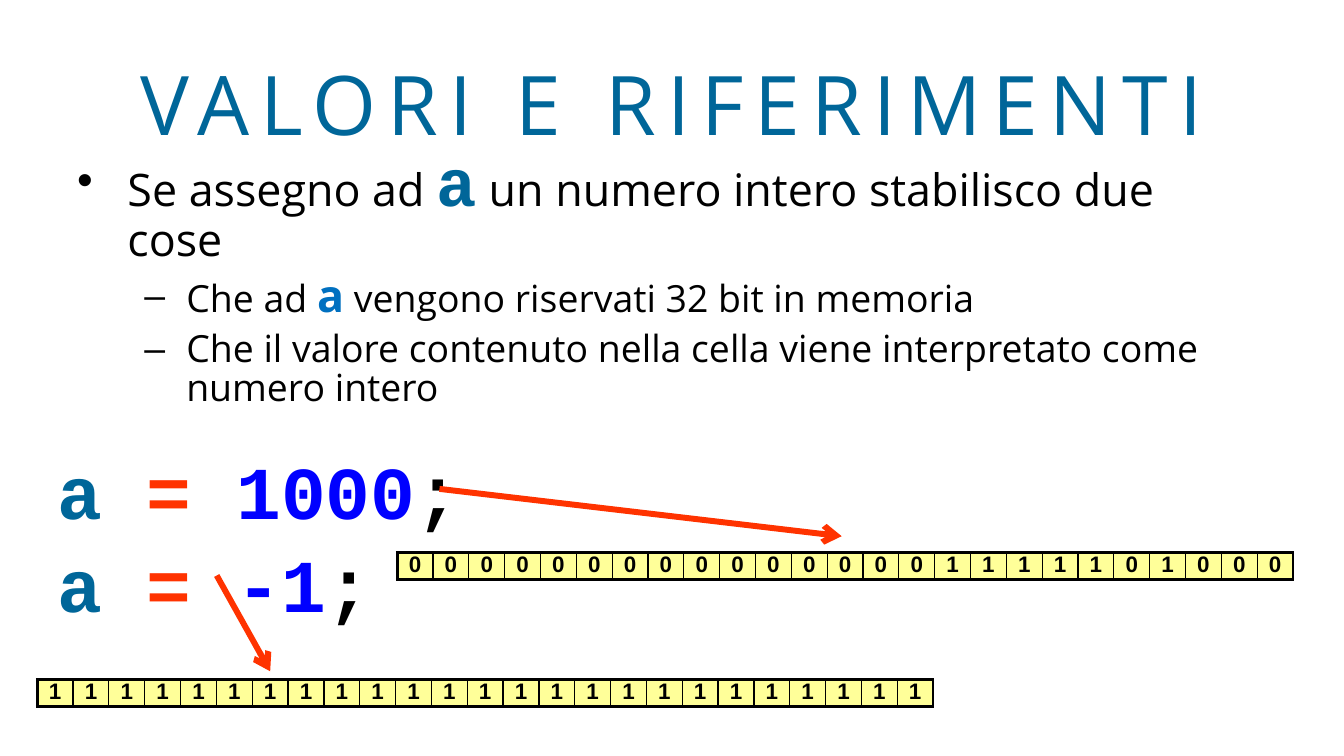
from dataclasses import dataclass

from lxml import etree
from pptx import Presentation
from pptx.dml.color import RGBColor
from pptx.enum import shapes, text
from pptx.oxml.ns import qn
from pptx.util import Pt


@dataclass(frozen=True)
class Theme:
    teal: str = "006699"
    blue: str = "0070C0"
    number: str = "0000FF"
    red: str = "FF3300"
    black: str = "000000"
    cell: str = "FFFF99"
    body: str = "Open Sans"
    code: str = "Courier New"
    bits: str = "Arial"
    title_size: float = 58.7
    code_size: float = 53.3
    variable_size: float = 48
    point_size: float = 32
    detail_size: float = 26.7
    bit_size: float = 16


theme = Theme()


def set_font(font, name, size, color, bold=False):
    font.name, font.size, font.bold = name, Pt(size), bold
    font.color.rgb = RGBColor.from_string(color)


def add_border(cell_properties, side, width, position):
    """Insert a solid black edge before the fill of a table cell."""
    edge = etree.Element(qn(f"a:ln{side}"), w=str(Pt(width)))
    fill = etree.SubElement(edge, qn("a:solidFill"))
    etree.SubElement(fill, qn("a:srgbClr"), val=theme.black)
    cell_properties.insert(position, edge)


deck = Presentation()
deck.slide_width, deck.slide_height = Pt(960), Pt(540)
slide = deck.slides.add_slide(deck.slide_layouts[5])

# Title
title = slide.shapes.title
title.left, title.top, title.width, title.height = Pt(48), Pt(28), Pt(864), Pt(90)
title.text_frame.auto_size = text.MSO_AUTO_SIZE.NONE
title.text_frame.vertical_anchor = text.MSO_ANCHOR.MIDDLE
heading = title.text_frame.paragraphs[0]
heading.alignment = text.PP_ALIGN.CENTER
heading_run = heading.add_run()
heading_run.text = "VALORI E RIFERIMENTI"
set_font(heading.font, theme.body, theme.title_size, theme.teal)
set_font(heading_run.font, theme.body, theme.title_size, theme.teal)
heading_run.font._element.set("spc", "800")

# Explanation: level, bullet, left margin, hanging indent, space before, runs
point = (theme.body, theme.point_size, theme.black)
detail = (theme.body, theme.detail_size, theme.black)
explanation = [
    (0, "•", 36, 36, 8, [
        ("Se assegno ad ", point),
        ("a", (theme.code, theme.variable_size, theme.teal, True)),
        (" un numero intero stabilisco due cose", point)]),
    (1, "–", 78, 30, 7, [
        ("Che ad ", detail),
        ("a", (theme.body, theme.point_size, theme.blue, True)),
        (" vengono riservati 32 bit in memoria", detail)]),
    (1, "–", 78, 30, 7, [
        ("Che il valore contenuto nella cella viene interpretato come numero intero",
         detail)]),
]
body = slide.shapes.add_textbox(Pt(48), Pt(104), Pt(825), Pt(136)).text_frame
body.word_wrap = True
for index, (level, bullet, margin, hanging, before, runs) in enumerate(explanation):
    paragraph = body.add_paragraph() if index else body.paragraphs[0]
    paragraph.level = level
    paragraph.space_before = Pt(before)
    paragraph.line_spacing = 0.86
    properties = paragraph._p.get_or_add_pPr()
    properties.set("marL", str(Pt(margin)))
    properties.set("indent", str(-Pt(hanging)))
    etree.SubElement(properties, qn("a:buFont"), typeface=theme.bits)
    etree.SubElement(properties, qn("a:buChar"), char=bullet)
    for words, style in runs:
        run = paragraph.add_run()
        run.text = words
        set_font(run.font, *style)

# Assignments
code = slide.shapes.add_textbox(Pt(34), Pt(314), Pt(305), Pt(137)).text_frame
code.word_wrap = False
for index, (value, before) in enumerate([("1000", 11), ("-1", 3)]):
    statement = code.add_paragraph() if index else code.paragraphs[0]
    statement.space_before = Pt(before)
    for token, color in [("a ", theme.teal), ("= ", theme.red),
                         (value, theme.number), (";", theme.black)]:
        run = statement.add_run()
        run.text = token
        set_font(run.font, theme.code, theme.code_size, color, True)

# Memory cells, each row with the arrow from its assignment
bit_width, bit_height = 25.6, 19.4
memory = [
    ("1" * 25, 26.6, 485.3, (154.8, 411.1, 193, 479.5)),
    ("0" * 15 + "1111101000", 283.7, 394.6, (313.9, 349.2, 601.2, 383)),
]
for bits, left, top, ends in memory:
    grid = slide.shapes.add_table(1, len(bits), Pt(left), Pt(top),
                                  Pt(bit_width * len(bits)), Pt(bit_height)).table
    grid.first_row = grid.horz_banding = False
    grid.rows[0].height = Pt(bit_height)
    for index, bit in enumerate(bits):
        grid.columns[index].width = Pt(bit_width)
        cell = grid.cell(0, index)
        cell.margin_left = cell.margin_right = cell.margin_top = cell.margin_bottom = 0
        cell.text = bit
        paragraph = cell.text_frame.paragraphs[0]
        paragraph.alignment = text.PP_ALIGN.CENTER
        set_font(paragraph.font, theme.bits, theme.bit_size, theme.black, True)
        cell.fill.solid()
        cell.fill.fore_color.rgb = RGBColor.from_string(theme.cell)
        edges = [("L", 2.25 if index == 0 else 1),
                 ("R", 2.25 if index == len(bits) - 1 else 1),
                 ("T", 2.25), ("B", 2.25)]
        for position, (side, width) in enumerate(edges):
            add_border(cell._tc.get_or_add_tcPr(), side, width, position)

    arrow = slide.shapes.add_connector(shapes.MSO_CONNECTOR.STRAIGHT,
                                       *[Pt(end) for end in ends])
    arrow.line.color.rgb = RGBColor.from_string(theme.red)
    arrow.line.width = Pt(4.25)
    etree.SubElement(arrow.line._get_or_add_ln(), qn("a:tailEnd"), type="arrow")
    etree.SubElement(arrow._element.spPr, qn("a:effectLst"))

deck.save("out.pptx")
